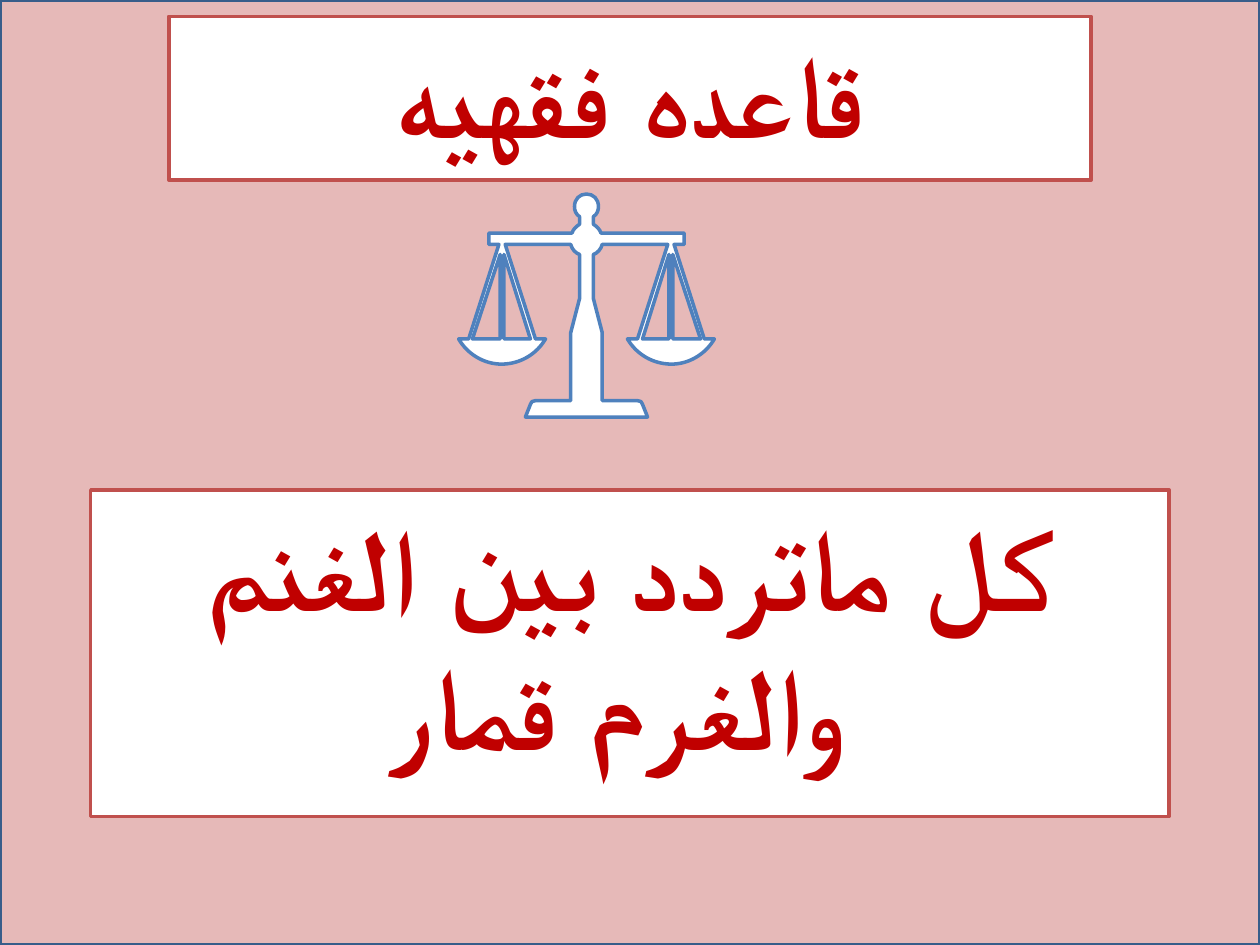
from dataclasses import dataclass

from pptx import Presentation
from pptx.dml.color import RGBColor
from pptx.enum.shapes import MSO_SHAPE
from pptx.enum.text import MSO_ANCHOR, MSO_AUTO_SIZE, PP_ALIGN
from pptx.oxml.xmlchemy import OxmlElement
from pptx.util import Pt

RECT = MSO_SHAPE.RECTANGLE
TOP = MSO_ANCHOR.TOP
NO_FIT = MSO_AUTO_SIZE.NONE
CENTER = PP_ALIGN.CENTER
PX = 9144
TITLE_ONLY = 5

Point = tuple[float, float]
Piece = tuple[Point, ...]


@dataclass(frozen=True)
class Theme:
    backdrop: str = "E6B9B8"
    frame: str = "385D8A"
    panel: str = "FFFFFF"
    panel_line: str = "C0504D"
    scales_line: str = "4F81BD"
    text: str = "C00000"
    font: str = "Calibri"
    size: int = 66
    line: int = 2


@dataclass(frozen=True)
class Box:
    left: int
    top: int
    width: int
    height: int

    def emu(self) -> tuple[int, ...]:
        return tuple(v * PX for v in (self.left, self.top, self.width, self.height))


THEME = Theme()
SLIDE = Box(0, 0, 1000, 750)
TITLE = Box(134, 13, 732, 130)
STATEMENT = Box(72, 389, 856, 259)
INSET = 5
AXIS = 465.5

LEFT_OUTLINE: list[Piece] = [
    ((AXIS, 154),),
    ((460, 154), (456, 158), (456, 164)),
    ((456, 167), (457, 170), (460, 172)),
    ((460, 178),),
    ((457, 180), (455, 182), (454, 185)),
    ((388, 185),), ((388, 194),), ((396, 194),), ((372, 269),), ((364, 269),),
    ((371, 281), (384, 289), (398, 289)),
    ((413, 289), (426, 281), (433, 269)),
    ((425, 269),), ((401, 194),), ((453, 194),),
    ((454, 198), (457, 201), (460, 202)),
    ((460, 237),), ((453, 264),), ((453, 318),), ((425, 318),),
    ((423, 318), (421, 319), (421, 321)),
    ((417, 331),),
]
LEFT_HOLES: list[list[Point]] = [
    [(397, 202), (397, 269), (375, 269)],
    [(400, 202), (421, 269), (400, 269)],
]


def mirror(points: list[Point]) -> list[Point]:
    return [(2 * AXIS - x, y) for x, y in reversed(points)]


def full_outline(pieces: list[Piece]) -> tuple[list[Point], list[int]]:
    left: list[Point] = []
    curves: list[int] = []
    for piece in pieces:
        if len(piece) == 3:
            curves.append(len(left) - 1)
        left.extend(piece)
    last = 2 * len(left) - 4
    return left + mirror(left), curves + [last - i for i in curves]


def bend(sp, curves: list[int]) -> None:
    lines = sp._element.xpath(".//a:lnTo")
    for i in curves:
        curve = OxmlElement("a:cubicBezTo")
        lines[i].addprevious(curve)
        for line in lines[i:i + 3]:
            curve.append(line[0])
            line.getparent().remove(line)


def paint(sp, fill: str, line: str) -> None:
    sp.fill.solid()
    sp.fill.fore_color.rgb = RGBColor.from_string(fill)
    sp.line.color.rgb = RGBColor.from_string(line)
    sp.line.width = Pt(THEME.line)


def add_rect(s, box: Box, fill: str, line: str):
    sp = s.shapes.add_shape(RECT, *box.emu())
    sp.shadow.inherit = False
    paint(sp, fill, line)
    return sp


def write(sp, text: str) -> None:
    tf = sp.text_frame
    tf.word_wrap = True
    tf.auto_size = NO_FIT
    tf.vertical_anchor = TOP
    tf.margin_left = tf.margin_right = tf.margin_top = tf.margin_bottom = INSET * PX
    p = tf.paragraphs[0]
    p.alignment = CENTER
    r = p.add_run()
    r.text = text
    r.font.name = THEME.font
    r.font.size = Pt(THEME.size)
    r.font.bold = True
    r.font.color.rgb = RGBColor.from_string(THEME.text)


def add_title(s, box: Box, text: str) -> None:
    sp = s.shapes.title
    sp.left, sp.top, sp.width, sp.height = box.emu()
    paint(sp, THEME.panel, THEME.panel_line)
    write(sp, text)
    s.shapes._spTree.append(sp._element)


def add_scales(s) -> None:
    outline, curves = full_outline(LEFT_OUTLINE)
    contours = [outline, *LEFT_HOLES, *map(mirror, LEFT_HOLES)]
    contours = [[(round(x * PX), round(y * PX)) for x, y in c] for c in contours]
    builder = s.shapes.build_freeform(*contours[0][0])
    for i, contour in enumerate(contours):
        if i:
            builder.move_to(*contour[0])
        builder.add_line_segments(contour[1:], close=True)
    sp = builder.convert_to_shape()
    sp.shadow.inherit = False
    bend(sp, curves)
    paint(sp, THEME.panel, THEME.scales_line)


def main() -> None:
    prs = Presentation()
    prs.slide_width, prs.slide_height = SLIDE.width * PX, SLIDE.height * PX
    s = prs.slides.add_slide(prs.slide_layouts[TITLE_ONLY])
    add_rect(s, SLIDE, THEME.backdrop, THEME.frame)
    statement = add_rect(s, STATEMENT, THEME.panel, THEME.panel_line)
    write(statement, "كل ماتردد بين الغنم والغرم قمار ")
    add_title(s, TITLE, "قاعده فقهيه")
    add_scales(s)
    prs.save("out.pptx")


if __name__ == "__main__":
    main()
